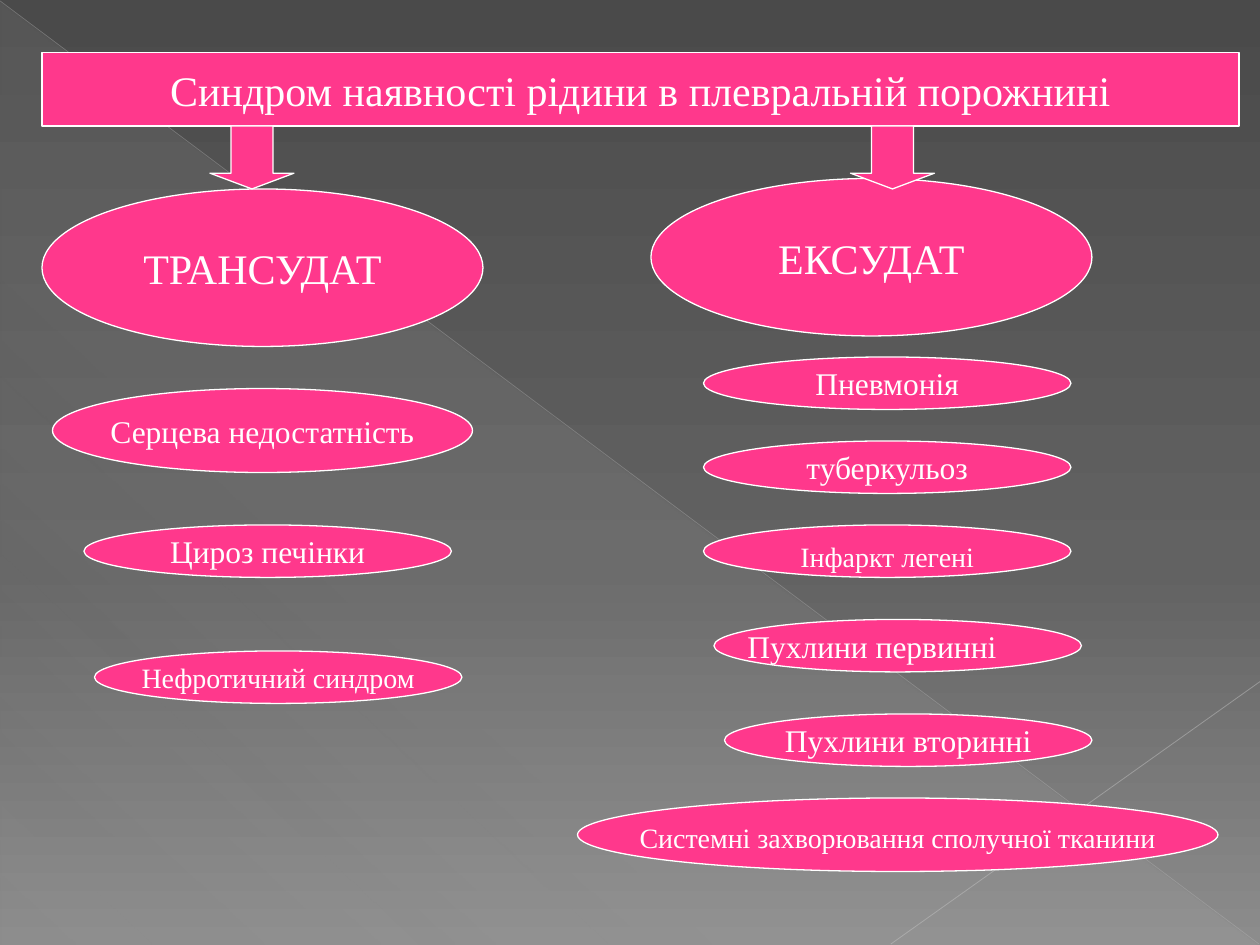
import lxml.etree
import pptx
import pptx.dml.color
import pptx.enum.shapes
import pptx.enum.text
import pptx.oxml.ns
import pptx.util

Pt = pptx.util.Pt
RGB = pptx.dml.color.RGBColor
KIND = pptx.enum.shapes.MSO_SHAPE
ALIGN = pptx.enum.text.PP_ALIGN
qn = pptx.oxml.ns.qn

PINK = RGB(0xFF, 0x38, 0x8C)
WHITE = RGB(0xFF, 0xFF, 0xFF)
DARK = RGB(0x4A, 0x4A, 0x4A)
MID = RGB(0x62, 0x62, 0x62)
LIGHT = RGB(0x8C, 0x8C, 0x8C)
SILVER = RGB(0xD2, 0xD2, 0xD2)
RAY = RGB(0xBF, 0xBF, 0xBF)
BEAM = RGB(0xC6, 0xC6, 0xC6)
FONT = "Times New Roman"


def fade(color, share):
    """Give a colour element an opacity in percent."""
    lxml.etree.SubElement(color, qn("a:alpha"), val=str(share * 1000))


def blend(fill, root, stops, angle):
    """Fill with a clockwise linear gradient of (place, colour, opacity) stops."""
    fill.gradient()
    fill.gradient_angle = 360 - angle
    group = root.find(".//" + qn("a:gsLst"))
    group.clear()
    for place, color, share in stops:
        stop = lxml.etree.SubElement(group, qn("a:gs"), pos=str(place * 1000))
        tint = lxml.etree.SubElement(stop, qn("a:srgbClr"), val=str(color))
        fade(tint, share)


def ray(slide, start, end, color, width, share):
    """Draw a thin translucent line."""
    line = slide.shapes.add_connector(
        pptx.enum.shapes.MSO_CONNECTOR.STRAIGHT,
        Pt(start[0]), Pt(start[1]), Pt(end[0]), Pt(end[1]))
    line.line.color.rgb = color
    line.line.width = Pt(width)
    fade(line.element.find(".//" + qn("a:srgbClr")), share)
    lxml.etree.SubElement(line.element.spPr, qn("a:effectLst"))


def backdrop(slide, left, top, width, height):
    """Place the grey gradient, the pale triangle and the two rays."""
    blend(slide.background.fill, slide.element,
          [(0, DARK, 100), (60, MID, 100), (100, LIGHT, 100)], 90)
    wedge = slide.shapes.add_shape(
        KIND.RIGHT_TRIANGLE, Pt(left + 0.5), Pt(top + 1),
        Pt(width - 1), Pt(height - 1))
    wedge.shadow.inherit = False
    wedge.line.fill.background()
    blend(wedge.fill, wedge.element,
          [(0, SILVER, 10), (70, SILVER, 8), (100, SILVER, 1)], 133)
    right, base = left + width, top + height - 0.5
    ray(slide, (left, top + 0.5), (right - 0.5, base), RAY, 0.39, 35)
    ray(slide, (right, top + 389.5), (left + 509, base), BEAM, 0.47, 45)


def write(frame, text, size, align):
    """Set one line of white text."""
    frame.word_wrap = False
    frame.text = text
    line = frame.paragraphs[0]
    line.alignment = align
    line.font.size = Pt(size)
    line.font.name = FONT
    line.font.color.rgb = WHITE


def block(slide, kind, box, text="", size=18, drop=0):
    """Add a pink shape with its label lowered by drop."""
    shape = slide.shapes.add_shape(kind, *map(Pt, box))
    shape.shadow.inherit = False
    shape.fill.solid()
    shape.fill.fore_color.rgb = PINK
    shape.line.color.rgb = WHITE
    shape.line.width = Pt(0.75)
    if text:
        frame = shape.text_frame
        frame.vertical_anchor = pptx.enum.text.MSO_ANCHOR.MIDDLE
        frame.margin_top = Pt(3.6 + 2 * drop)
        write(frame, text, size, ALIGN.CENTER)
    return shape


def banner(slide, left, top, width, height):
    """Place the title bar."""
    block(slide, KIND.RECTANGLE, (left, top, width, height),
          "Синдром наявності рідини в плевральній порожнині", 24)


def branch(slide, left, top, title, drop, shift, items):
    """Place a head with its causes and the arrow leading to it."""
    block(slide, KIND.OVAL, (left, top + drop, 252, 90), title, 24)
    for (x, y, width, height), *label in items:
        block(slide, KIND.OVAL, (left + x, top + y, width, height), *label)
    block(slide, KIND.DOWN_ARROW, (left + shift, top, 48, 36)
          ).adjustments[1] = 0.25


def caption(slide, left, top, width, height, text):
    """Place a left-aligned label."""
    box = slide.shapes.add_textbox(Pt(left), Pt(top), Pt(width), Pt(height))
    write(box.text_frame, text, 18, ALIGN.LEFT)


def main():
    """Build the slide."""
    deck = pptx.Presentation()
    deck.slide_width, deck.slide_height = Pt(720), Pt(540)
    slide = deck.slides.add_slide(deck.slide_layouts[6])
    backdrop(slide, 0, 0, 720, 540)
    banner(slide, 24, 30, 684, 42)
    branch(slide, 24, 72, "ТРАНСУДАТ", 36, 96, [
        ((6, 150, 240, 48), "Серцева недостатність"),
        ((24, 228, 210, 30), "Цироз печінки"),
        ((30, 300, 210, 30), "Нефротичний синдром", 16),
    ])
    branch(slide, 372, 72, "ЕКСУДАТ", 30, 114, [
        ((30, 132, 210, 30), "Пневмонія"),
        ((30, 180, 210, 30), "туберкульоз"),
        ((30, 228, 210, 30), "Інфаркт легені", 16, 3),
        ((36, 282, 210, 30),),
        ((42, 336, 210, 30), "Пухлини вторинні"),
        ((-42, 384, 366, 42), "Системні захворювання сполучної тканини", 16, 1.5),
    ])
    caption(slide, 420, 355, 158, 29, "Пухлини первинні")
    deck.save("out.pptx")


if __name__ == "__main__":
    main()
